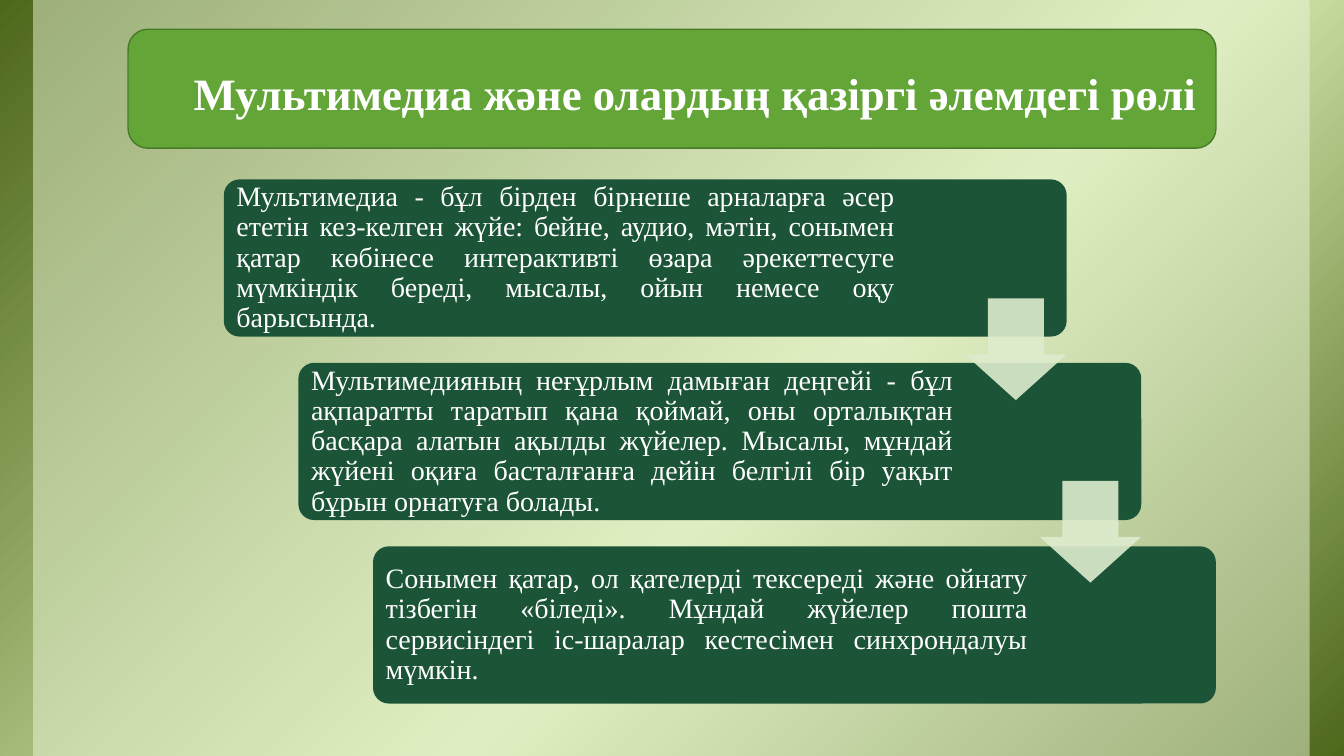
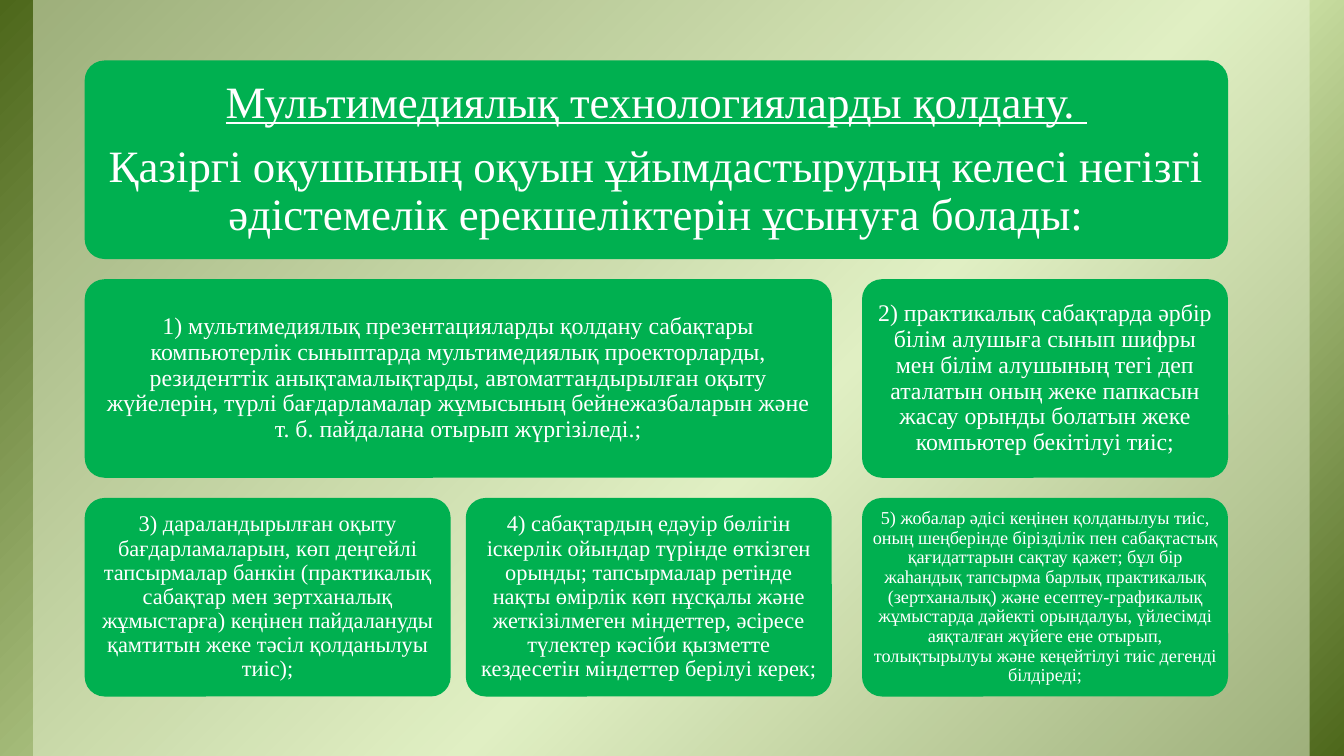
import pptx
import pptx.util
import pptx.oxml
import pptx.oxml.ns
import pptx.dml.color
import pptx.enum.shapes
import pptx.enum.text
from lxml import etree

Inches = pptx.util.Inches
Pt = pptx.util.Pt
RGB = pptx.dml.color.RGBColor
KIND = pptx.enum.shapes.MSO_SHAPE
ALIGN = pptx.enum.text.PP_ALIGN
qn = pptx.oxml.ns.qn

# Shared style
WIDE, HIGH = 13.33, 7.5
FONT = "Times New Roman"
WHITE = RGB(0xFF, 0xFF, 0xFF)
PALE = RGB(0xEB, 0xF5, 0xD7)
LEAF = RGB(0x63, 0xA5, 0x37)
EDGE = RGB(0x49, 0x7A, 0x29)
PINE = RGB(0x1C, 0x54, 0x38)
MINT = RGB(0xDE, 0xEC, 0xCE)
GREEN = RGB(0x00, 0xB0, 0x50)
BLEND = [(0, "4D671B"), (58, "D6EAAF"), (100, "4D671B")]

# Slide 1: heading and steps (text, right margin)
ROLE = "Мультимедиа және олардың қазіргі әлемдегі рөлі"
STEPS = [
    ("Мультимедиа - бұл бірден бірнеше арналарға әсер ететін кез-келген жүйе: "
     "бейне, аудио, мәтін, сонымен қатар көбінесе интерактивті өзара "
     "әрекеттесуге мүмкіндік береді, мысалы, ойын немесе оқу барысында.", 1.66),
    ("Мультимедияның неғұрлым дамыған деңгейі - бұл ақпаратты таратып қана "
     "қоймай, оны орталықтан басқара алатын ақылды жүйелер. Мысалы, мұндай "
     "жүйені оқиға басталғанға дейін белгілі бір уақыт бұрын орнатуға болады.",
     1.82),
    ("Сонымен қатар, ол қателерді тексереді және ойнату тізбегін «біледі». "
     "Мұндай жүйелер пошта сервисіндегі іс-шаралар кестесімен синхрондалуы "
     "мүмкін.", 1.82),
]

# Slide 2: heading and cards (row, first column, last column, size, margin, text)
USES = ["Мультимедиялық технологияларды қолдану. ",
        "Қазіргі оқушының оқуын ұйымдастырудың келесі негізгі әдістемелік "
        "ерекшеліктерін ұсынуға болады:"]
CARDS = [
    (1, 0, 1, 17, 0.07,
     "1) мультимедиялық презентацияларды қолдану сабақтары компьютерлік "
     "сыныптарда мультимедиялық проекторларды, резиденттік анықтамалықтарды, "
     "автоматтандырылған оқыту жүйелерін, түрлі бағдарламалар жұмысының "
     "бейнежазбаларын және т. б. пайдалана отырып жүргізіледі.;"),
    (1, 2, 2, 17, 0.07,
     "2) практикалық сабақтарда әрбір білім алушыға сынып шифры мен білім "
     "алушының тегі деп аталатын оның жеке папкасын жасау орынды болатын жеке "
     "компьютер бекітілуі тиіс;"),
    (2, 0, 0, 16, 0.07,
     "3) дараландырылған оқыту бағдарламаларын, көп деңгейлі тапсырмалар "
     "банкін (практикалық сабақтар мен зертханалық жұмыстарға) кеңінен "
     "пайдалануды қамтитын жеке тәсіл қолданылуы тиіс);"),
    (2, 1, 1, 16, 0.07,
     "4) сабақтардың едәуір бөлігін іскерлік ойындар түрінде өткізген орынды; "
     "тапсырмалар ретінде нақты өмірлік көп нұсқалы және жеткізілмеген "
     "міндеттер, әсіресе түлектер кәсіби қызметте кездесетін міндеттер "
     "берілуі керек;"),
    (2, 2, 2, 13, 0.05,
     "5) жобалар әдісі кеңінен қолданылуы тиіс, оның шеңберінде бірізділік пен "
     "сабақтастық қағидаттарын сақтау қажет; бұл бір жаһандық тапсырма барлық "
     "практикалық (зертханалық) және есептеу-графикалық жұмыстарда дәйекті "
     "орындалуы, үйлесімді аяқталған жүйеге ене отырып, толықтырылуы және "
     "кеңейтілуі тиіс дегенді білдіреді;"),
]


def apply(item, form):
    for name, value in form.items():
        setattr(item, name, value)


def draw(slide, kind, box, fill, alpha=None, adjust=()):
    shape = slide.shapes.add_shape(kind, *map(Inches, box))
    shape.shadow.inherit = False
    shape.fill.solid()
    shape.fill.fore_color.rgb = fill
    shape.line.fill.background()
    for i, value in enumerate(adjust):
        shape.adjustments[i] = value
    if alpha is not None:
        tint = next(shape._element.spPr.iter(qn("a:srgbClr")))
        etree.SubElement(tint, qn("a:alpha"), val=str(alpha * 1000))
    return shape


def write(shape, texts, size, sides, align, lead=0.9, bold=False):
    """Fill a shape with text; sides are left, top, right, bottom margins."""
    left, top, right, base = map(Inches, sides)
    frame = shape.text_frame
    apply(frame, dict(
        word_wrap=True, auto_size=pptx.enum.text.MSO_AUTO_SIZE.NONE,
        vertical_anchor=pptx.enum.text.MSO_ANCHOR.MIDDLE,
        margin_left=left, margin_top=top, margin_right=right,
        margin_bottom=base))
    for i, text in enumerate(texts):
        para = frame.add_paragraph() if i else frame.paragraphs[0]
        last = i == len(texts) - 1
        apply(para, dict(alignment=align, line_spacing=lead,
                         space_before=Pt(0),
                         space_after=Pt(0 if last else size * 0.35)))
        run = para.add_run()
        run.text = text
        apply(run.font, dict(name=FONT, size=Pt(size), bold=bold))
        run.font.color.rgb = WHITE
    return frame.paragraphs


def head(slide, box, fill, texts, adjust=(), **form):
    """Lay the title placeholder over a rounded panel."""
    title = slide.shapes.title
    panel = draw(slide, KIND.ROUNDED_RECTANGLE, box, fill, adjust=adjust)
    title._element.addprevious(panel._element)
    apply(title, dict(zip(("left", "top", "width", "height"),
                          map(Inches, box))))
    return panel, write(title, texts, 32, **form)


def backdrop(deck, slide):
    """Draw the gradient and the pale veil once, on the slide master."""
    base = draw(slide, KIND.RECTANGLE, (0, 0, WIDE, HIGH), WHITE)
    stops = "".join(
        f'<a:gs pos="{pos * 1000}"><a:srgbClr val="{tone}"/></a:gs>'
        for pos, tone in BLEND)
    grad = pptx.oxml.parse_xml(
        f'<a:gradFill {pptx.oxml.ns.nsdecls("a")} rotWithShape="1">'
        f'<a:gsLst>{stops}</a:gsLst><a:lin ang="2700000" scaled="0"/>'
        '</a:gradFill>')
    props = base._element.spPr
    props.replace(props.find(qn("a:solidFill")), grad)
    veil = draw(slide, KIND.RECTANGLE, (0.33, 0, 12.66, HIGH), PALE, 50)
    tree = deck.slide_master.element.cSld.spTree
    for i, part in enumerate((base, veil)):
        tree.insert(2 + i, part._element)


def steps(slide):
    panel, paras = head(slide, (1.27, 0.29, 10.79, 1.18), LEAF, [ROLE],
                        sides=(0.16, 0.05, 0.16, 0.05), align=ALIGN.JUSTIFY,
                        lead=1.15, bold=True)
    panel.line.color.rgb = EDGE
    panel.line.width = Pt(1)
    props = paras[0]._p.get_or_add_pPr()
    props.set("marL", "0")
    props.set("indent", str(Inches(0.49)))

    # Staircase of boxes, then the arrows between them
    for i, (text, right) in enumerate(STEPS):
        box = draw(slide, KIND.ROUNDED_RECTANGLE,
                   (2.22 + 0.74 * i, 1.78 + 1.82 * i, 8.36, 1.56),
                   PINE, adjust=[0.1])
        write(box, [text], 20, (0.08, 0, right, 0), ALIGN.JUSTIFY)
    for i in range(len(STEPS) - 1):
        draw(slide, KIND.DOWN_ARROW,
             (9.57 + 0.74 * i, 2.96 + 1.81 * i, 1.01, 1.01),
             MINT, 90, [0.45, 0.55])._element.spPr.prstGeom.rewrite_guides(
                 [("adj1", 55000), ("adj2", 45000)])


def cards(slide):
    cols, wide, tall, gap, top = (0.84, 4.62, 8.55), 3.63, 1.97, 0.2, 0.6
    full = cols[-1] + wide - cols[0]
    _, paras = head(slide, (cols[0], top, full, tall), GREEN, USES, [0.1],
                    sides=(0.19,) * 4, align=ALIGN.CENTER)
    paras[0].runs[0].font.underline = True
    for row, first, last, size, side, text in CARDS:
        box = draw(slide, KIND.ROUNDED_RECTANGLE,
                   (cols[first], top + row * (tall + gap),
                    cols[last] + wide - cols[first], tall),
                   GREEN, adjust=[0.1])
        write(box, [text], size, (side,) * 4, ALIGN.CENTER)


def main():
    deck = pptx.Presentation()
    deck.slide_width, deck.slide_height = Inches(WIDE), Inches(HIGH)
    for i, build in enumerate((steps, cards)):
        slide = deck.slides.add_slide(deck.slide_layouts[5])
        if i == 0:
            backdrop(deck, slide)
        build(slide)
    deck.save("out.pptx")


if __name__ == "__main__":
    main()
